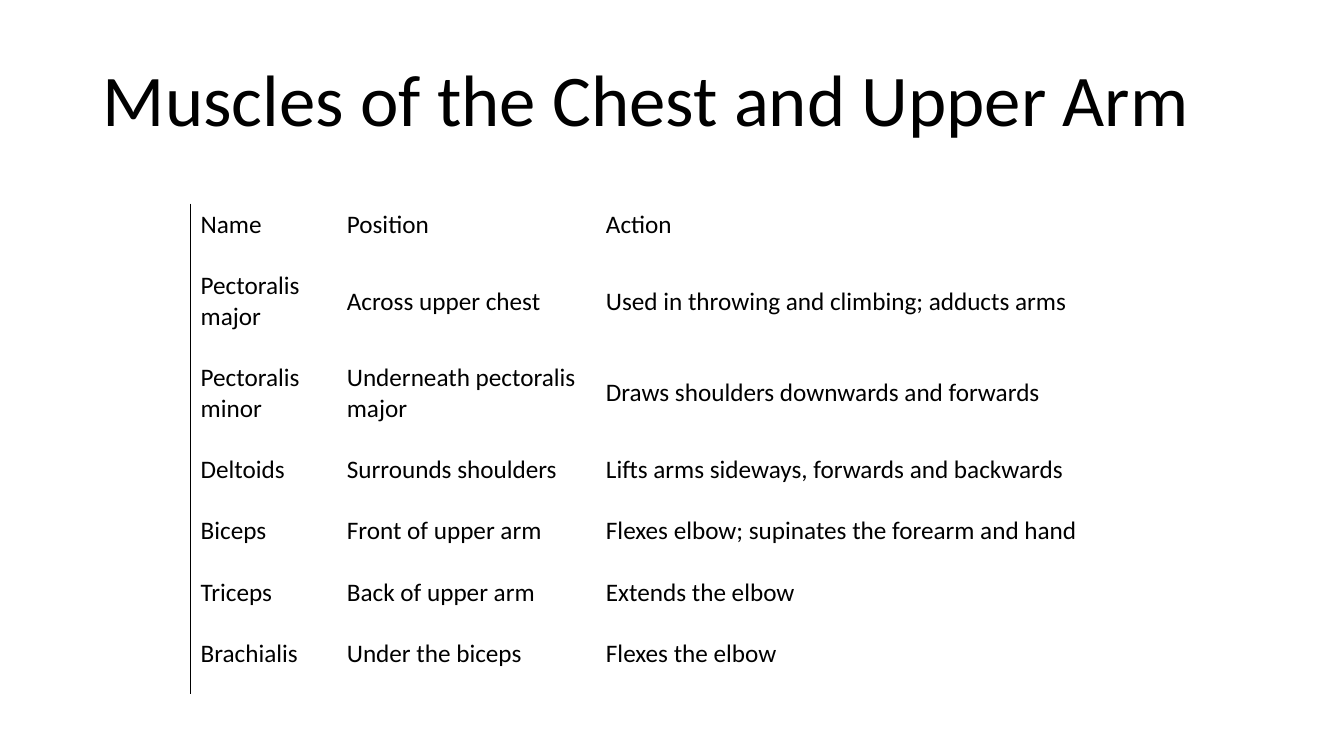
import pptx
import pptx.dml.color
import pptx.enum.text
import pptx.oxml
import pptx.oxml.ns
import pptx.util

Inches = pptx.util.Inches
Pt = pptx.util.Pt
MIDDLE = pptx.enum.text.MSO_ANCHOR.MIDDLE
BLACK = "000000"
NO_STYLE_NO_GRID = "{2D5ABB26-0587-4C30-8999-92F81FD0307C}"


def format_paragraph(paragraph, size, color):
    """Set the alignment, font, size and colour of a paragraph."""
    paragraph.alignment = pptx.enum.text.PP_ALIGN.LEFT
    values = {"name": "Calibri", "size": Pt(size), "bold": False}
    for name, value in values.items():
        setattr(paragraph.font, name, value)
    paragraph.font.color.rgb = pptx.dml.color.RGBColor.from_string(color)


def add_left_border(cell, width, color):
    """Draw a solid line along the left edge of a table cell."""
    border = pptx.oxml.parse_xml(
        f'<a:lnL {pptx.oxml.ns.nsdecls("a")} w="{Pt(width)}">'
        f'<a:solidFill><a:srgbClr val="{color}"/></a:solidFill></a:lnL>'
    )
    cell._tc.get_or_add_tcPr().insert(0, border)


presentation = pptx.Presentation()
presentation.slide_width = Inches(13.33)
presentation.slide_height = Inches(7.5)
slide = presentation.slides.add_slide(presentation.slide_layouts[5])

# Title
title = slide.shapes.title
title_box = {"left": 0.92, "top": 0.2, "width": 11.5, "height": 1.65}
for name, value in title_box.items():
    setattr(title, name, Inches(value))
title.text_frame.text = "Muscles of the Chest and Upper Arm"
title.text_frame.vertical_anchor = MIDDLE
title_paragraph = title.text_frame.paragraphs[0]
title_paragraph.line_spacing = 0.9
format_paragraph(title_paragraph, 52, BLACK)

# Muscle table
muscles = [
    ("Name", "Position", "Action"),
    ("Pectoralis major", "Across upper chest", "Used in throwing and climbing; adducts arms"),
    ("Pectoralis minor", "Underneath pectoralis major", "Draws shoulders downwards and forwards"),
    ("Deltoids", "Surrounds shoulders", "Lifts arms sideways, forwards and backwards"),
    ("Biceps", "Front of upper arm", "Flexes elbow; supinates the forearm and hand"),
    ("Triceps", "Back of upper arm", "Extends the elbow"),
    ("Brachialis", "Under the biceps", "Flexes the elbow"),
]
column_widths = [1.45, 2.57, 5.52]
two_line_rows = (1, 2)
row_heights = [0.91 if row in two_line_rows else 0.61 for row in range(len(muscles))]
cell_format = {
    "margin_left": Inches(0.1),
    "margin_top": Inches(0.03),
    "margin_right": Inches(0.15),
    "margin_bottom": Inches(0.22),
    "vertical_anchor": MIDDLE,
}

table_frame = slide.shapes.add_table(
    len(muscles), len(column_widths), Inches(1.89), Inches(2.02),
    Inches(sum(column_widths)), Inches(sum(row_heights)),
)
table = table_frame.table
table.first_row = False
table.horz_banding = False
table_style = table_frame.element.find(".//" + pptx.oxml.ns.qn("a:tableStyleId"))
table_style.text = NO_STYLE_NO_GRID

for column, width in zip(table.columns, column_widths):
    column.width = Inches(width)
for row, height, muscle in zip(table.rows, row_heights, muscles):
    row.height = Inches(height)
    for cell, text in zip(row.cells, muscle):
        cell.text = text
        cell.fill.background()
        for name, value in cell_format.items():
            setattr(cell, name, value)
        format_paragraph(cell.text_frame.paragraphs[0], 18, BLACK)
    add_left_border(row.cells[0], 0.75, BLACK)

presentation.save("out.pptx")
